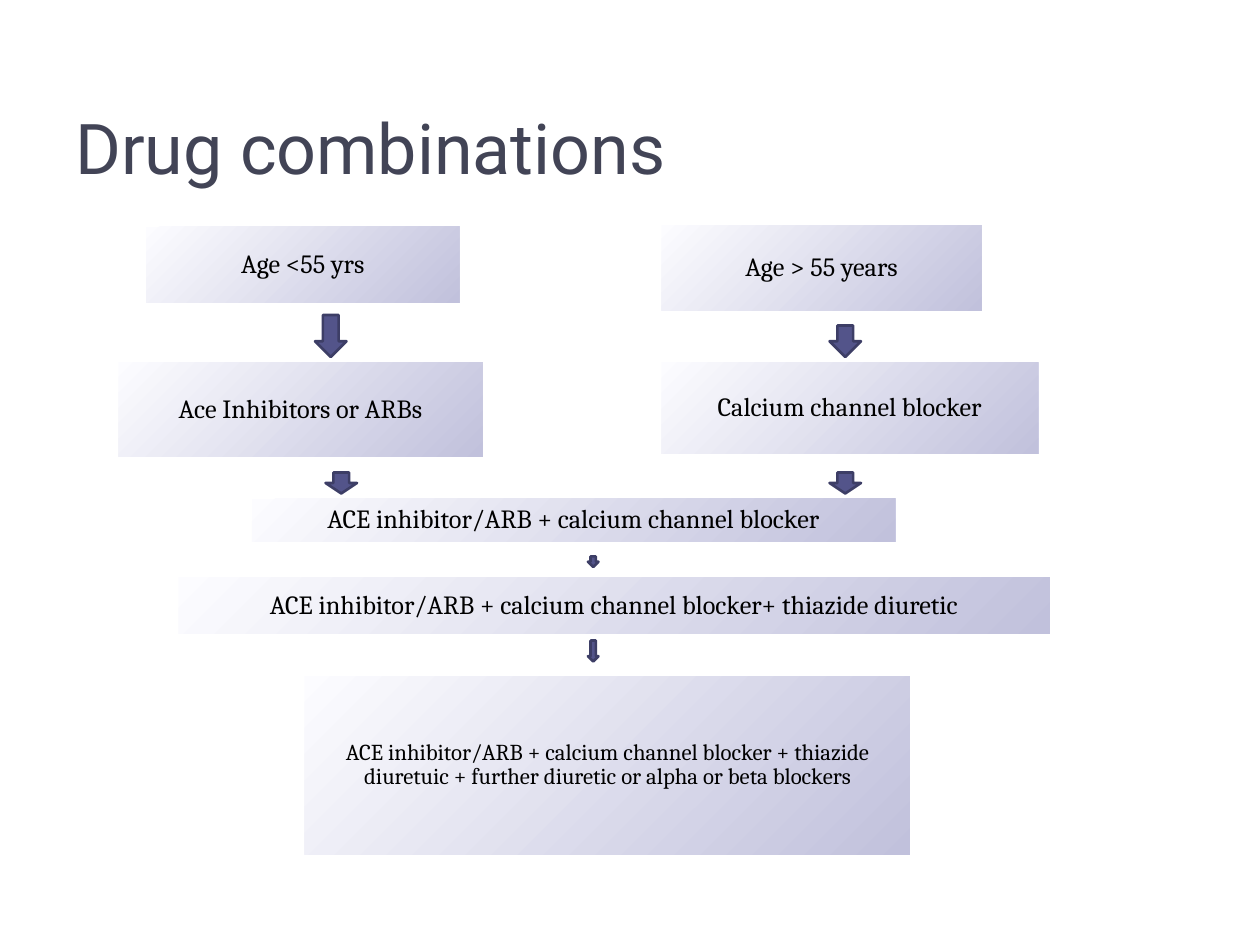
from pptx import Presentation
from pptx.dml.color import RGBColor
from pptx.enum.shapes import MSO_SHAPE as Shape
from pptx.enum.text import MSO_ANCHOR as Anchor, PP_ALIGN as Align
from pptx.util import Pt


def color(code):
    return RGBColor.from_string(code)


class Chart:
    """Holds the style and the current slide."""
    body, head = "Cambria", "Roboto"
    ink, title_ink = "000000", "424456"
    pale, deep = "FCFCFF", "C1C1DC"
    blue, edge = "53548A", "3D3E66"

    def __init__(self, slide):
        self.slide = slide

    def add_text(self, para, text, font, size, ink):
        run = para.add_run()
        run.text = text
        run.font.name, run.font.size = font, Pt(size)
        run.font.color.rgb = color(ink)

    def shape(self, kind, place):
        item = self.slide.shapes.add_shape(kind, *map(Pt, place))
        item.shadow.inherit = False
        return item

    def title(self, text, *place):
        frame = self.slide.shapes.add_textbox(*map(Pt, place)).text_frame
        frame.word_wrap = True
        frame.vertical_anchor = Anchor.MIDDLE
        self.add_text(frame.paragraphs[0], text, self.head, 40, self.title_ink)

    def box(self, text, *place, size=15, pad=4.5):
        item = self.shape(Shape.RECTANGLE, place)
        item.line.fill.background()
        # Pale top left corner, deep bottom right corner
        item.fill.gradient()
        item.fill.gradient_angle = 315
        for stop, code in zip(item.fill.gradient_stops, (self.pale, self.deep)):
            stop.color.rgb = color(code)
        frame = item.text_frame
        frame.word_wrap = True
        frame.vertical_anchor = Anchor.MIDDLE
        frame.margin_left = frame.margin_right = Pt(pad)
        frame.margin_top = frame.margin_bottom = Pt(pad)
        para = frame.paragraphs[0]
        para.alignment, para.line_spacing = Align.CENTER, 0.9
        self.add_text(para, text, self.body, size, self.ink)

    def arrow(self, *place):
        item = self.shape(Shape.DOWN_ARROW, place)
        item.fill.solid()
        item.fill.fore_color.rgb = color(self.blue)
        item.line.color.rgb = color(self.edge)
        item.line.width = Pt(1.5)


def main():
    deck = Presentation()
    deck.slide_width, deck.slide_height = Pt(720), Pt(540)
    chart = Chart(deck.slides.add_slide(deck.slide_layouts[6]))

    # Age groups and their first drugs
    chart.box("Age <55 yrs", 83.5, 129.6, 179, 43.4)
    chart.box("Age > 55 years", 378, 128.6, 183, 48.8)
    chart.box("Calcium channel blocker", 378, 207, 215.2, 52.4)
    chart.box("Ace Inhibitors or ARBs", 67.6, 207, 208.2, 54)

    # Shared steps
    both = "ACE inhibitor/ARB + calcium channel blocker"
    chart.box(both + " + thiazide diuretuic + further diuretic"
              " or alpha or beta blockers", 174, 386.4, 346, 101.8,
              size=13, pad=3.9)
    chart.box(both + "+ thiazide diuretic", 102, 329.8, 498, 32.4)
    chart.box(both, 144, 285, 367.6, 24.6)

    chart.title("Drug combinations", 36, 42, 648, 83.5)

    # Arrows down through the steps
    for left, top, high in ((180, 180, 24), (474, 186, 18),
                            (186, 270, 12), (474, 270, 12)):
        chart.arrow(left, top, 18, high)
    for top, high in ((318, 6), (366, 12)):
        chart.arrow(336, top, 6, high)

    deck.save("out.pptx")


if __name__ == "__main__":
    main()
